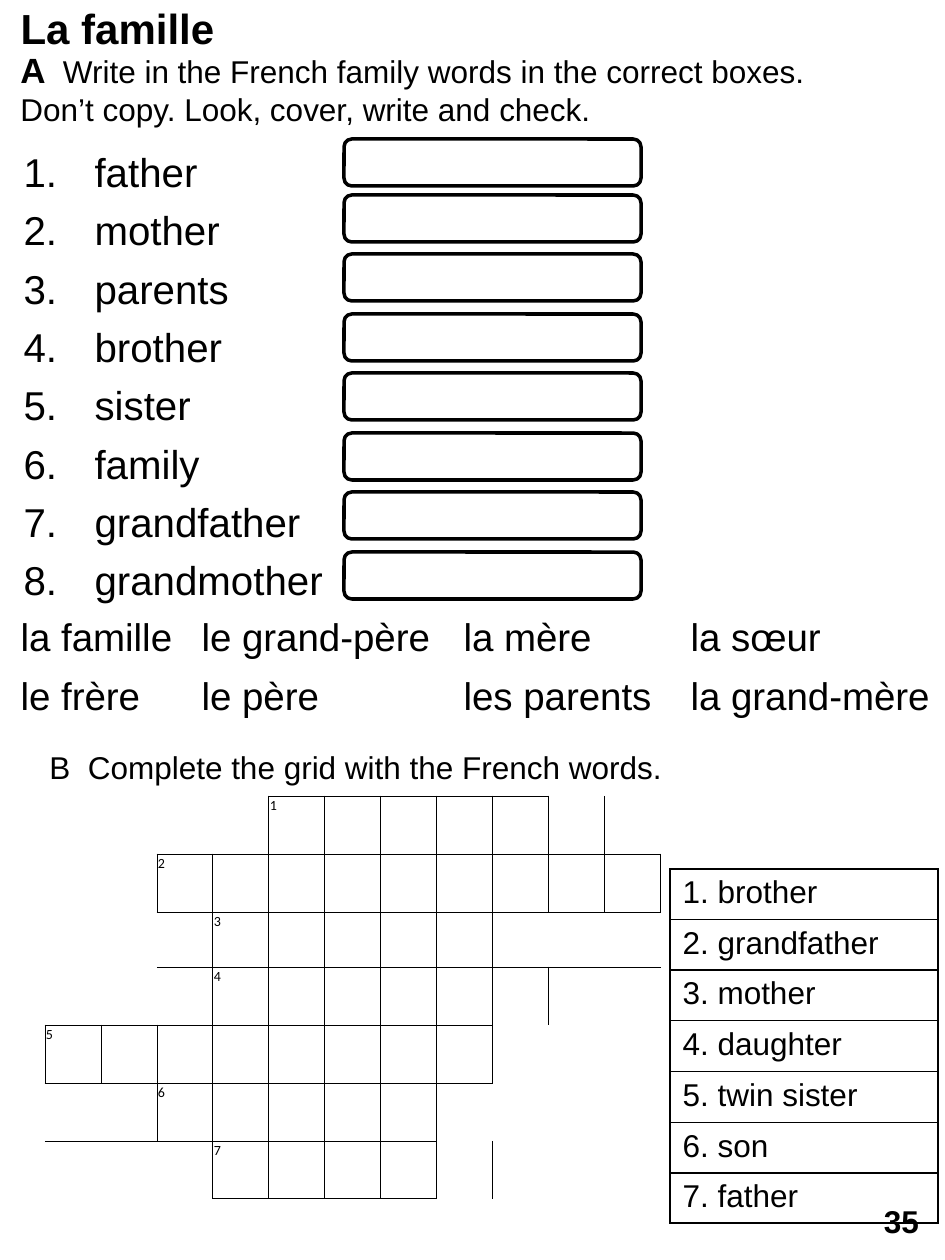
from lxml.etree import SubElement as Sub
from pptx import Presentation
from pptx.dml.color import RGBColor as Rgb
from pptx.enum.shapes import MSO_SHAPE as Kind
from pptx.enum.text import MSO_ANCHOR as Anchor, MSO_AUTO_SIZE as Auto, PP_ALIGN as Align
from pptx.oxml.ns import qn
from pptx.util import Pt

PX = 914400 / 126
HUES = {"ink": "000000"}
NO_STYLE = "{2D5ABB26-0587-4C30-8999-92F81FD0307C}"
SIDES = {"L": (0, -1), "R": (0, 1), "T": (-1, 0), "B": (1, 0)}

WORDS = ["father", "mother", "parents", "brother", "sister", "family",
         "grandfather", "grandmother"]
FRENCH = [["la famille", "le grand-père", "la mère", "la sœur"],
          ["le frère", "le père", "les parents", "la grand-mère"]]
CLUES = ["brother", "grandfather", "mother", "daughter", "twin sister", "son", "father"]
SPANS = [(4, 5), (2, 9), (3, 4), (3, 5), (0, 7), (2, 4), (3, 4)]  # first column, letters


def px(n):
    return round(n * PX)


def ink():
    return Rgb.from_string(HUES["ink"])


def style(frame, size, bold=False, face="Arial"):
    for para in frame.paragraphs:
        for run in para.runs:
            font = run.font
            font.name, font.size, font.bold = face, Pt(size), bold
            font.color.rgb = ink()


def place(shape, box):
    shape.left, shape.top, shape.width, shape.height = map(px, box)


def add_text(slide, box, text, size):
    frame = slide.shapes.add_textbox(*map(px, box)).text_frame
    frame.word_wrap = True
    frame.text = text
    style(frame, size)
    return frame


def add_round(slide, box):
    shape = slide.shapes.add_shape(Kind.ROUNDED_RECTANGLE, *map(px, box))
    shape.shadow.inherit = False
    shape.fill.background()
    return shape


def add_grid(slide, left, top, cols, rows):
    """Add a plain table with the given column widths and row heights."""
    box = map(px, (left, top, sum(cols), sum(rows)))
    table = slide.shapes.add_table(len(rows), len(cols), *box).table
    table.first_row = table.horz_banding = False
    table._tbl.tblPr.find(qn("a:tableStyleId")).text = NO_STYLE
    for col, w in zip(table.columns, cols):
        col.width = px(w)
    for row, h in zip(table.rows, rows):
        row.height = px(h)
    for cell in table.iter_cells():
        cell.fill.background()
    return table


def fill_cell(cell, text, size, face="Arial"):
    cell.text = text
    style(cell.text_frame, size, face=face)


def edge(cell, sides, width):
    props = cell._tc.get_or_add_tcPr()
    for i, side in enumerate(sides):
        line = Sub(props, qn("a:ln" + side), w=str(Pt(width)))
        Sub(Sub(line, qn("a:solidFill")), qn("a:srgbClr"), val=HUES["ink"])
        props.insert(i, line)


def set_title(slide):
    title = slide.shapes.title
    place(title, (8, -4, 220, 63))
    frame = title.text_frame
    frame.text = "La famille"
    frame.word_wrap, frame.auto_size = False, Auto.NONE
    frame.vertical_anchor = Anchor.MIDDLE
    frame.paragraphs[0].alignment = Align.LEFT
    style(frame, 24, True)


def set_list(slide):
    body = slide.placeholders[1]
    place(body, (11, 141, 557, 417))
    frame = body.text_frame
    frame.text = "\n".join(WORDS)
    frame.auto_size = Auto.NONE
    style(frame, 23)
    for para in frame.paragraphs:
        para.space_before = Pt(5.75)
        props = para._p.get_or_add_pPr()
        props.set("marL", str(px(71)))
        props.set("indent", str(-px(71)))
        Sub(props, qn("a:buFont"), typeface="Arial")
        Sub(props, qn("a:buAutoNum"), type="arabicPeriod")


def add_task(slide):
    frame = add_text(slide, (8, 42, 873, 93), "A ", 20)
    style(frame, 20, True)
    run = frame.paragraphs[0].add_run()
    run.text = (" Write in the French family words in the correct boxes. "
                "Don’t copy. Look, cover, write and check.")
    font = run.font
    font.name, font.size, font.bold = "Arial", Pt(18), False
    font.color.rgb = ink()


def add_boxes(slide):
    for top in [139] + [195 + i * 119 // 2 for i in range(7)]:
        line = add_round(slide, (344, top, 297, 47)).line
        line.color.rgb = ink()
        line.width = Pt(2)


def add_french(slide):
    table = add_grid(slide, 8, 610, [181, 262, 227, 328], [59, 59])
    for r, row in enumerate(FRENCH):
        for c, word in enumerate(row):
            fill_cell(table.cell(r, c), word, 22)


def add_clues(slide):
    rows = [51 if i in (3, 4) else 50 for i in range(len(CLUES))]
    table = add_grid(slide, 670, 869, [268], rows)
    for i, clue in enumerate(CLUES):
        cell = table.cell(i, 0)
        fill_cell(cell, f"{i + 1}. {clue}", 18)
        edge(cell, SIDES, 1)


def add_puzzle(slide):
    rows = [55 if i == 2 else 58 for i in range(len(SPANS))]
    table = add_grid(slide, 45, 796, [56] * 11, rows)
    used = {(r, c) for r, (first, count) in enumerate(SPANS)
            for c in range(first, first + count)}
    for r, (first, _) in enumerate(SPANS):
        start = table.cell(r, first)
        start.margin_left = start.margin_right = start.margin_top = px(1)
        start.margin_bottom = 0
        fill_cell(start, str(r + 1), 8, "Calibri")
        for c in range(11):
            sides = [s for s, (dr, dc) in SIDES.items()
                     if used & {(r, c), (r + dr, c + dc)}]
            edge(table.cell(r, c), sides, 0.5)


def add_page(slide):
    shape = add_round(slide, (867, 1191, 69, 59))
    shape.line.fill.background()
    frame = shape.text_frame
    frame.text = "35"
    frame.vertical_anchor = Anchor.MIDDLE
    frame.paragraphs[0].alignment = Align.CENTER
    style(frame, 18, True)


def main():
    deck = Presentation()
    deck.slide_width, deck.slide_height = px(945), px(1260)
    slide = deck.slides.add_slide(deck.slide_layouts[1])
    set_list(slide)
    add_french(slide)
    set_title(slide)
    add_task(slide)
    add_boxes(slide)
    add_text(slide, (37, 742, 645, 50), "B  Complete the grid with the French words.", 18)
    add_clues(slide)
    add_page(slide)
    add_puzzle(slide)
    deck.save("out.pptx")


if __name__ == "__main__":
    main()
